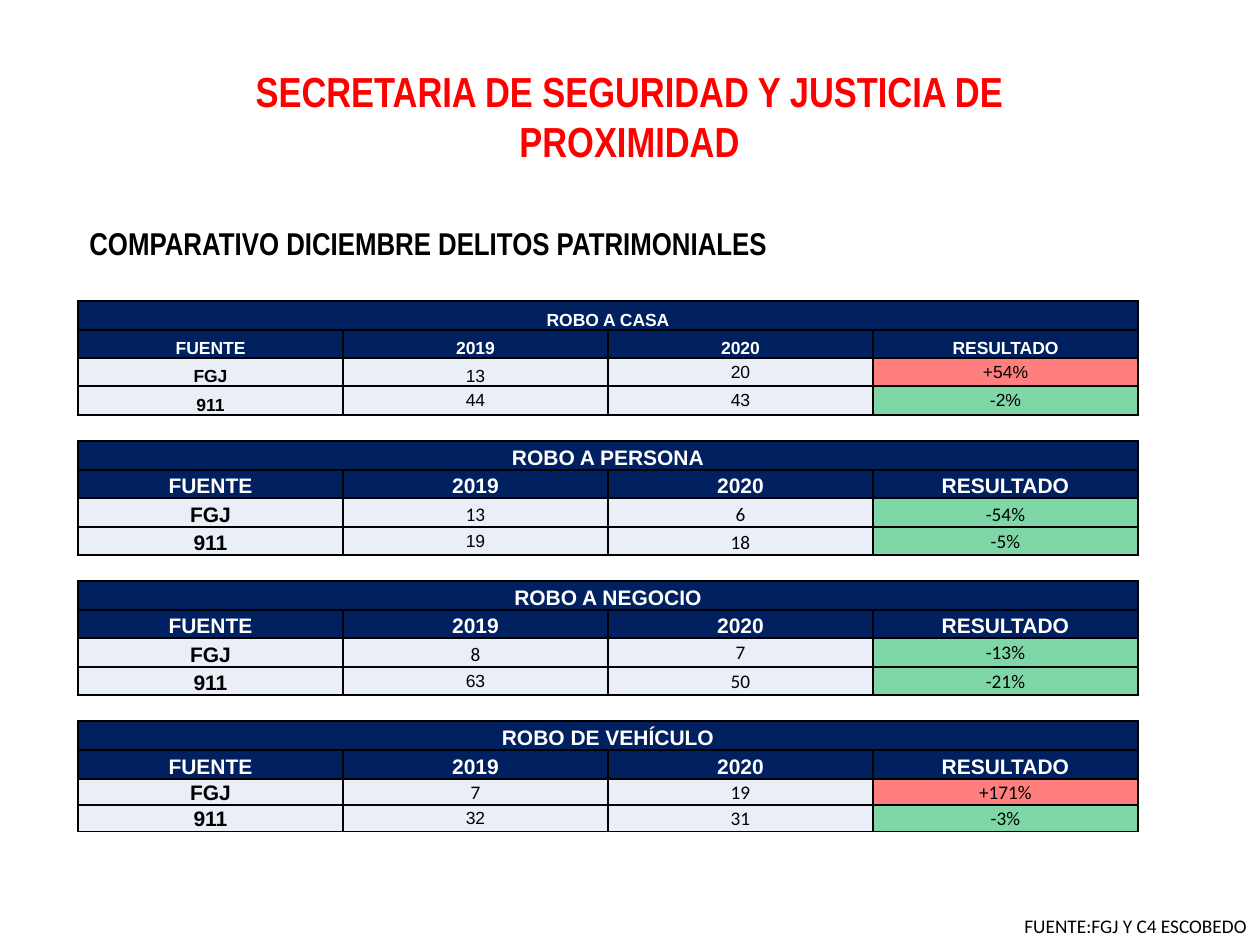
from typing import NamedTuple

from lxml.etree import SubElement
from pptx import Presentation
from pptx.dml.color import RGBColor
from pptx.enum.text import MSO_ANCHOR as Anchor, MSO_AUTO_SIZE as AutoSize, PP_ALIGN as Align
from pptx.oxml.ns import qn
from pptx.util import Emu, Pt

PX = 914400 / 126
NAVY, PALE, WHITE, BLACK = "002060", "EAEFF7", "FFFFFF", "000000"
RED, GREEN = "FF0000", "00B050"
TABLE_LEFT, FIRST_TOP, TABLE_STEP, COLUMN_WIDTH = 78, 301, 140, 265
HEADINGS = ("FUENTE", "2019", "2020", "RESULTADO")
ANCHORS = {"b": Anchor.BOTTOM, "m": Anchor.MIDDLE}


class Style(NamedTuple):
    size: int
    font: str = "Arial"
    color: str = BLACK
    bold: bool = False


class Label(NamedTuple):
    text: str
    left: int
    top: int
    width: int
    height: int
    style: Style
    align: Align = Align.LEFT
    wrap: bool = True


class Source(NamedTuple):
    values: tuple[str, ...]
    anchors: str  # one letter per column: b bottom, m middle


class Crime(NamedTuple):
    title: str
    heading_size: int
    row_heights: tuple[int, ...]
    figures: Style
    fgj: Source
    emergency: Source


SMALL = Style(10)
CALIBRI = Style(11, "Calibri")
EVEN_ROWS = (29, 28, 29, 28)

LABELS = (
    Label("SECRETARIA DE SEGURIDAD Y JUSTICIA DE PROXIMIDAD", 239, 59, 781, 115,
          Style(24, "Arial Narrow", RED, True), Align.CENTER),
    Label("COMPARATIVO DICIEMBRE DELITOS PATRIMONIALES", 77, 218, 930, 50,
          Style(18, "Arial Narrow", BLACK, True)),
    Label("FUENTE:FGJ Y C4 ESCOBEDO", 1012, 908, 249, 37, CALIBRI, wrap=False),
)

CRIMES = (
    Crime("ROBO A CASA", 10, (29, 28, 28, 29), SMALL,
          Source(("FGJ", "13", "20", "+54%"), "bbmm"),
          Source(("911", "44", "43", "-2%"), "bmmm")),
    Crime("ROBO A PERSONA", 12, EVEN_ROWS, CALIBRI,
          Source(("FGJ", "13", "6", "-54%"), "bbbb"),
          Source(("911", "19", "18", "-5%"), "bmbm")),
    Crime("ROBO A NEGOCIO", 12, EVEN_ROWS, CALIBRI,
          Source(("FGJ", "8", "7", "-13%"), "bbmm"),
          Source(("911", "63", "50", "-21%"), "bmmm")),
    Crime("ROBO DE VEHÍCULO", 12, (29, 29, 26, 26), CALIBRI,
          Source(("FGJ", "7", "19", "+171%"), "bbmm"),
          Source(("911", "32", "31", "-3%"), "bmmm")),
)


def px(length: int) -> Emu:
    return Emu(round(length * PX))


def rgb(color: str) -> RGBColor:
    return RGBColor.from_string(color)


def write(frame, text: str, style: Style, align: Align) -> None:
    paragraph = frame.paragraphs[0]
    paragraph.alignment = align
    run = paragraph.add_run()
    run.text = text
    font = run.font
    font.size, font.name, font.bold = Pt(style.size), style.font, style.bold
    font.color.rgb = rgb(style.color)


def add_label(slide, label: Label) -> None:
    box = slide.shapes.add_textbox(px(label.left), px(label.top), px(label.width), px(label.height))
    frame = box.text_frame
    frame.word_wrap = label.wrap
    frame.auto_size = AutoSize.SHAPE_TO_FIT_TEXT
    write(frame, label.text, label.style, label.align)


def paint_cell(cell, color: str, alpha: int = 100) -> None:
    """Give the cell black 1 pt borders and a fill of the given opacity."""
    properties = cell._tc.get_or_add_tcPr()
    for side in ("lnL", "lnR", "lnT", "lnB"):
        line = SubElement(properties, qn(f"a:{side}"), w=str(Pt(1)))
        SubElement(SubElement(line, qn("a:solidFill")), qn("a:srgbClr"), val=BLACK)
    cell.fill.solid()
    cell.fill.fore_color.rgb = rgb(color)
    if alpha < 100:
        tint = properties.find(f"{qn('a:solidFill')}/{qn('a:srgbClr')}")
        SubElement(tint, qn("a:alpha"), val=str(alpha * 1000))


def fill_cell(cell, text: str, style: Style, anchor: str = "b") -> None:
    cell.margin_left = cell.margin_right = cell.margin_top = px(1)
    cell.margin_bottom = 0
    cell.vertical_anchor = ANCHORS[anchor]
    write(cell.text_frame, text, style, Align.CENTER)


def add_source_row(table, row: int, source: Source, crime: Crime) -> None:
    name_style = Style(crime.heading_size, bold=True)
    first_figure = SMALL if source is crime.emergency else crime.figures
    styles = (name_style, first_figure, crime.figures, crime.figures)
    for column, (text, style, anchor) in enumerate(zip(source.values, styles, source.anchors)):
        cell = table.cell(row, column)
        if column == 3:
            paint_cell(cell, RED if text.startswith("+") else GREEN, 50)
        else:
            paint_cell(cell, PALE)
        fill_cell(cell, text, style, anchor)


def add_crime_table(slide, crime: Crime, top: int) -> None:
    columns = len(HEADINGS)
    table = slide.shapes.add_table(
        4, columns, px(TABLE_LEFT), px(top),
        px(COLUMN_WIDTH * columns), px(sum(crime.row_heights))).table
    table.first_row = table.horz_banding = False
    for column in table.columns:
        column.width = px(COLUMN_WIDTH)
    for row, height in zip(table.rows, crime.row_heights):
        row.height = px(height)

    heading = Style(crime.heading_size, color=WHITE, bold=True)
    for column, text in enumerate(HEADINGS):
        paint_cell(table.cell(0, column), NAVY)
        paint_cell(table.cell(1, column), NAVY)
        fill_cell(table.cell(1, column), text, heading)
    table.cell(0, 0).merge(table.cell(0, columns - 1))
    fill_cell(table.cell(0, 0), crime.title, heading)

    add_source_row(table, 2, crime.fgj, crime)
    add_source_row(table, 3, crime.emergency, crime)


def main() -> None:
    deck = Presentation()
    deck.slide_width, deck.slide_height = px(1260), px(945)
    slide = deck.slides.add_slide(deck.slide_layouts[6])
    for label in LABELS:
        add_label(slide, label)
    for index, crime in enumerate(CRIMES):
        add_crime_table(slide, crime, FIRST_TOP + index * TABLE_STEP)
    deck.save("out.pptx")


if __name__ == "__main__":
    main()
